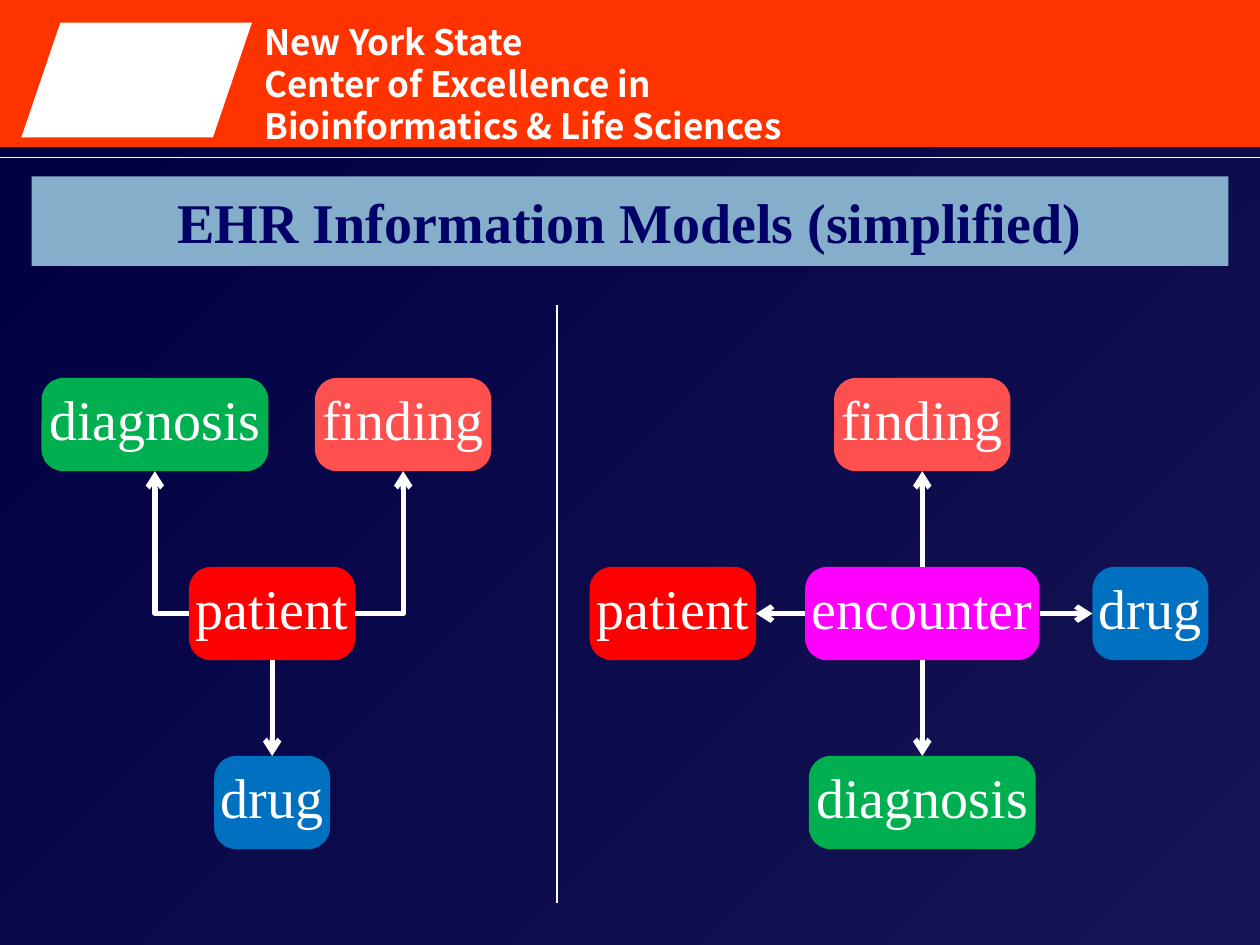
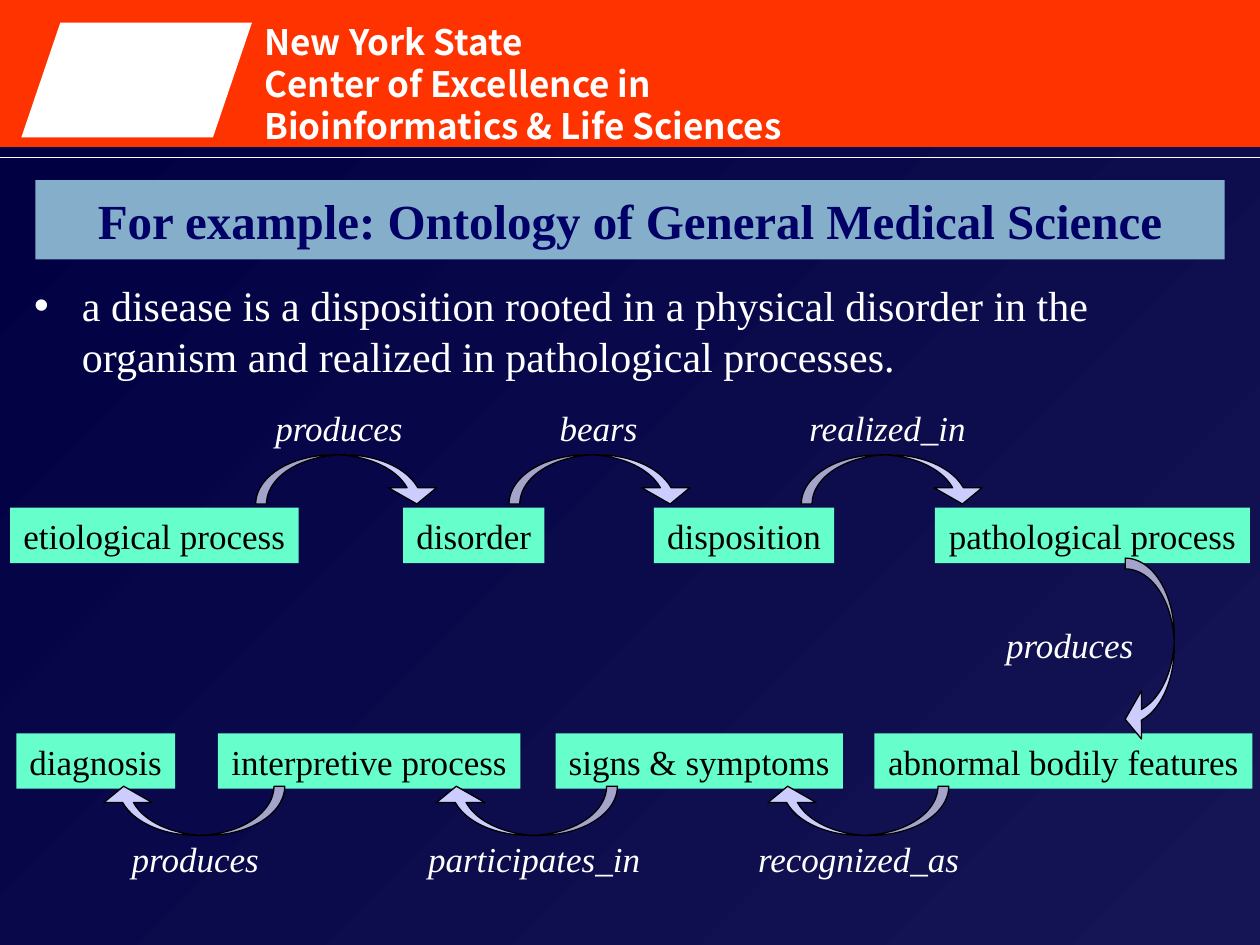
from lxml import etree
from pptx import Presentation
from pptx.dml.color import RGBColor
from pptx.enum.shapes import MSO_CONNECTOR, MSO_SHAPE
from pptx.enum.text import MSO_ANCHOR, PP_ALIGN
from pptx.oxml.ns import qn
from pptx.util import Inches, Pt

RECT, ROUND = MSO_SHAPE.RECTANGLE, MSO_SHAPE.ROUNDED_RECTANGLE
SLANTED, CURVED = MSO_SHAPE.PARALLELOGRAM, MSO_SHAPE.CURVED_DOWN_ARROW
STRAIGHT, ELBOW = MSO_CONNECTOR.STRAIGHT, MSO_CONNECTOR.ELBOW
CENTER, LEFT, MIDDLE = PP_ALIGN.CENTER, PP_ALIGN.LEFT, MSO_ANCHOR.MIDDLE
SIDE_TOP, SIDE_LEFT, SIDE_BOTTOM, SIDE_RIGHT = range(4)

WHITE, BLACK, BAND, RED_BG = "FFFFFF", "000000", "84AECA", "FF3300"
NAVY, INDIGO, TITLE_BLUE = "000042", "151555", "000066"
MINT, LILAC = "66FFCC", "CCCCFF"
SERIF = "Times New Roman"

HEADER = ["New York State", "Center of Excellence in Bioinformatics & Life Sciences"]
HEADER_FONT = {"name": "Noto Sans CJK KR", "size": Pt(20), "bold": True}
NODE_FONT = {"name": SERIF, "size": Pt(32)}
BODY_FONT = {"name": SERIF, "size": Pt(24)}
STEP_FONT = {"name": SERIF, "size": Pt(20)}
RELATION_FONT = {"name": SERIF, "size": Pt(20), "italic": True}

MODELS_TITLE = ("EHR Information Models (simplified)", (0.25, 1.4, 9.5, 0.71), 32)
NODE_KINDS = {
    "patient": (1.32, "FF0000"),
    "diagnosis": (1.8, "00B050"),
    "drug": (0.92, "0070C0"),
    "finding": (1.4, "FF5050"),
    "encounter": (1.86, "FF00FF"),
}
NODE_H = 0.74
MODELS = [
    {
        "nodes": {"patient": (2.16, 4.5), "diagnosis": (1.23, 3), "drug": (2.16, 6), "finding": (3.2, 3)},
        "links": [
            ("patient", SIDE_LEFT, "diagnosis", SIDE_BOTTOM, ELBOW),
            ("patient", SIDE_RIGHT, "finding", SIDE_BOTTOM, ELBOW),
            ("patient", SIDE_BOTTOM, "drug", SIDE_TOP, STRAIGHT),
        ],
    },
    {
        "nodes": {"encounter": (7.32, 4.5), "patient": (5.34, 4.5), "diagnosis": (7.32, 6),
                  "drug": (9.13, 4.5), "finding": (7.32, 3)},
        "links": [
            ("encounter", SIDE_BOTTOM, "diagnosis", SIDE_TOP, STRAIGHT),
            ("encounter", SIDE_LEFT, "patient", SIDE_RIGHT, STRAIGHT),
            ("encounter", SIDE_TOP, "finding", SIDE_BOTTOM, STRAIGHT),
            ("encounter", SIDE_RIGHT, "drug", SIDE_LEFT, STRAIGHT),
        ],
    },
]

OGMS_TITLE = ("For example: Ontology of General Medical Science", (0.28, 1.43, 9.44, 0.63), 28)
DEFINITION = ("a disease is a disposition rooted in a physical disorder in the organism "
              "and realized in pathological processes.")
STEP_ROWS = [
    (4.03, [("etiological process", 0.08, 2.29), ("disorder", 3.2, 1.12),
            ("disposition", 5.19, 1.43), ("pathological process", 7.42, 2.5)]),
    (5.82, [("abnormal bodily features", 6.94, 3), ("signs & symptoms", 4.41, 2.28),
            ("interpretive process", 1.73, 2.4), ("diagnosis", 0.13, 1.26)]),
]
RELATION_ROWS = [
    (3.18, 3.61, 0, [("produces", 2.08, 1.22, 2.03), ("bears", 4.34, 0.82, 4.04),
                     ("realized_in", 6.32, 1.45, 6.36)]),
    (6.6, 6.24, 180, [("produces", 0.94, 1.22, 0.79), ("participates_in", 3.29, 1.9, 3.43),
                      ("recognized_as", 5.91, 1.81, 6.06)]),
    (4.9, 4.97, 90, [("produces", 7.88, 1.22, 8.39)]),
]
ROW_H = 0.44


def rgb(color):
    return RGBColor.from_string(color)


def inches(box):
    return [Inches(v) for v in box]


def place(sp, box):
    sp.left, sp.top, sp.width, sp.height = inches(box)


def write(sp, lines, font, color, align=CENTER, wrap=True, anchor=None):
    tf = sp.text_frame
    tf.word_wrap = wrap
    if anchor is not None:
        tf.vertical_anchor = anchor
    for i, line in enumerate(lines):
        p = tf.paragraphs[0] if i == 0 else tf.add_paragraph()
        p.alignment = align
        r = p.add_run()
        r.text = line
        for name, value in font.items():
            setattr(r.font, name, value)
        r.font.color.rgb = rgb(color)
    return tf


def add_shape(s, kind, box, fill=None, line=None, adj=()):
    sp = s.shapes.add_shape(kind, *inches(box))
    sp.shadow.inherit = False
    if fill:
        sp.fill.solid()
        sp.fill.fore_color.rgb = rgb(fill)
    if line:
        sp.line.color.rgb = rgb(line)
        sp.line.width = Pt(0.75)
    else:
        sp.line.fill.background()
    for i, value in enumerate(adj):
        sp.adjustments[i] = value
    return sp


def add_line(s, ends=(0, 0, 0, 0), kind=STRAIGHT, width=0.75):
    cxn = s.shapes.add_connector(kind, *inches(ends))
    cxn.line.color.rgb = rgb(WHITE)
    cxn.line.width = Pt(width)
    etree.SubElement(cxn._element.spPr, qn("a:effectLst"))
    return cxn


def add_link(s, start, start_side, end, end_side, kind):
    cxn = add_line(s, kind=kind, width=3)
    cxn.begin_connect(start, start_side)
    cxn.end_connect(end, end_side)
    if kind == ELBOW:
        cxn._element.spPr.find(qn("a:prstGeom")).set("prst", "bentConnector2")
    ln = cxn._element.spPr.find(qn("a:ln"))
    etree.SubElement(ln, qn("a:tailEnd"), type="arrow")


def add_header(prs, s):
    master = prs.slide_master
    master.background.fill.solid()
    master.background.fill.fore_color.rgb = rgb(RED_BG)

    panel = add_shape(s, RECT, (0, 1.17, 10, 6.33))
    panel.fill.gradient()
    panel.fill.gradient_angle = 315
    for stop, color, position in zip(panel.fill.gradient_stops, (NAVY, INDIGO), (0, 1)):
        stop.color.rgb = rgb(color)
        stop.position = position

    name = s.shapes.add_textbox(*inches((2, 0.11, 4.58, 1.1)))
    tf = write(name, HEADER, HEADER_FONT, WHITE, LEFT)
    for p in tf.paragraphs:
        p.line_spacing = Pt(24)

    emblem = add_shape(s, SLANTED, (0.17, 0.18, 1.83, 0.91), WHITE, adj=[0.34])
    rule = add_line(s, (0, 1.25, 10, 1.25))
    for i, sp in enumerate((panel, name, emblem, rule)):
        sp._element.xpath(".//p:cNvPr")[0].set("id", str(100 + i))
        master.shapes._spTree.insert(2 + i, sp._element)


def add_title(s, text, box, size):
    sp = s.shapes.title
    place(sp, box)
    sp.fill.solid()
    sp.fill.fore_color.rgb = rgb(BAND)
    font = {"name": SERIF, "size": Pt(size), "bold": True}
    write(sp, [text], font, TITLE_BLUE, anchor=MIDDLE)


def add_node(s, label, center, top):
    width, color = NODE_KINDS[label]
    sp = add_shape(s, ROUND, (center - width / 2, top, width, NODE_H), color, adj=[0.235])
    tf = write(sp, [label], NODE_FONT, WHITE, wrap=False, anchor=MIDDLE)
    tf.margin_left = tf.margin_top = tf.margin_right = 0
    tf.margin_bottom = Inches(0.1)
    return sp


def build_models(s):
    add_title(s, *MODELS_TITLE)
    for model in MODELS:
        nodes = {label: add_node(s, label, *at) for label, at in model["nodes"].items()}
        for start, start_side, end, end_side, kind in model["links"]:
            add_link(s, nodes[start], start_side, nodes[end], end_side, kind)
    add_line(s, (4.42, 2.42, 4.42, 7.17))


def build_ogms(s):
    add_title(s, *OGMS_TITLE)
    body = s.placeholders[1]
    place(body, (0.17, 2.17, 9.67, 5.17))
    p = write(body, [DEFINITION], BODY_FONT, WHITE, LEFT).paragraphs[0]
    p.space_before = Pt(4.8)
    pPr = p._p.get_or_add_pPr()
    pPr.set("marL", str(Inches(0.38)))
    pPr.set("indent", str(-Inches(0.38)))
    color = etree.SubElement(pPr, qn("a:buClr"))
    etree.SubElement(color, qn("a:srgbClr"), val=WHITE)
    etree.SubElement(pPr, qn("a:buChar"), char="•")

    for top, steps in STEP_ROWS:
        for label, left, width in steps:
            sp = add_shape(s, RECT, (left, top, width, ROW_H), MINT)
            write(sp, [label], STEP_FONT, BLACK, wrap=False, anchor=MIDDLE)

    for label_top, arrow_top, rotation, relations in RELATION_ROWS:
        for label, left, width, arrow_left in relations:
            sp = s.shapes.add_textbox(*inches((left, label_top, width, ROW_H)))
            write(sp, [label], RELATION_FONT, WHITE, wrap=False)
            arrow = add_shape(s, CURVED, (arrow_left, arrow_top, 1.47, 0.39), LILAC, BLACK,
                              (0.22, 0.98, 0.33))
            arrow.rotation = rotation


def main():
    prs = Presentation()
    prs.slide_width, prs.slide_height = Inches(10), Inches(7.5)
    models = prs.slides.add_slide(prs.slide_layouts[5])
    add_header(prs, models)
    build_models(models)
    build_ogms(prs.slides.add_slide(prs.slide_layouts[1]))
    prs.save("out.pptx")


if __name__ == "__main__":
    main()
